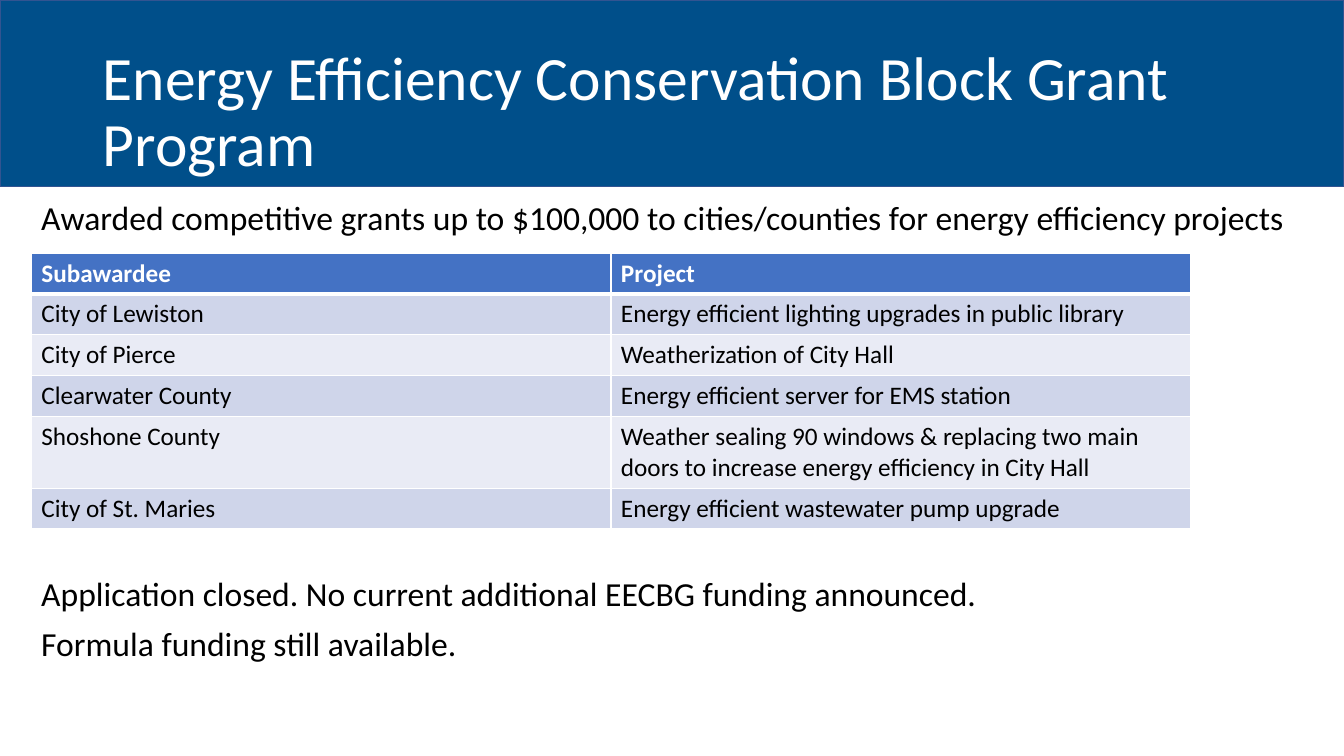
import dataclasses

import lxml.etree
import pptx
import pptx.dml.color
import pptx.enum.shapes
import pptx.enum.text
import pptx.oxml.ns
import pptx.presentation
import pptx.shapes.autoshape
import pptx.slide
import pptx.table
import pptx.text.text
import pptx.util

COLORS = {
    "banner": "004F8A",
    "banner_edge": "325491",
    "header": "4472C4",
    "odd_row": "CFD5EA",
    "even_row": "E9EBF5",
    "white": "FFFFFF",
    "black": "000000",
}
FONT = "Calibri"
SLIDE_WIDTH = pptx.util.Inches(13.33)
SLIDE_HEIGHT = pptx.util.Inches(7.5)
LEFT_MARGIN = 2.33
CONTENT_WIDTH = 86.25
LINE_ROW = 5.41
WRAPPED_ROW = 9.41


@dataclasses.dataclass(frozen=True)
class Area:
    left: float
    top: float
    width: float
    height: float

    def lengths(self) -> tuple[int, int, int, int]:
        return (
            across(self.left), down(self.top),
            across(self.width), down(self.height),
        )


@dataclasses.dataclass(frozen=True)
class Note:
    area: Area
    lines: tuple[str, ...]


@dataclasses.dataclass(frozen=True)
class Award:
    subawardee: str
    project: str
    height: float = LINE_ROW


TITLE = "Energy Efficiency Conservation Block Grant Program"
AWARDS = (
    Award("Subawardee", "Project"),
    Award("City of Lewiston", "Energy efficient lighting upgrades in public library"),
    Award("City of Pierce", "Weatherization of City Hall"),
    Award("Clearwater County", "Energy efficient server for EMS station"),
    Award(
        "Shoshone County",
        "Weather sealing 90 windows & replacing two main doors "
        "to increase energy efficiency in City Hall",
        WRAPPED_ROW,
    ),
    Award("City of St. Maries", "Energy efficient wastewater pump upgrade"),
)
NOTES = (
    Note(
        Area(LEFT_MARGIN, 75.73, 74.94, 12.93),
        (
            "Application closed. No current additional EECBG funding announced.",
            "Formula funding still available.",
        ),
    ),
    Note(
        Area(LEFT_MARGIN, 26, 97.67, 6.13),
        (
            "Awarded competitive grants up to $100,000 to cities/counties "
            "for energy efficiency projects",
        ),
    ),
)


def across(percent: float) -> int:
    return round(SLIDE_WIDTH * percent / 100)


def down(percent: float) -> int:
    return round(SLIDE_HEIGHT * percent / 100)


def color(name: str) -> pptx.dml.color.RGBColor:
    return pptx.dml.color.RGBColor.from_string(COLORS[name])


def format_text(
    frame: pptx.text.text.TextFrame, size: float, color_name: str, bold: bool = False
) -> None:
    for paragraph in frame.paragraphs:
        for run in paragraph.runs:
            run.font.name = FONT
            run.font.size = pptx.util.Pt(size)
            run.font.bold = bold
            run.font.color.rgb = color(color_name)


def draw_title(slide: pptx.slide.Slide) -> None:
    title = slide.shapes.title
    title.left, title.top, title.width, title.height = Area(
        6.9, 5.33, CONTENT_WIDTH, 19.33
    ).lengths()
    frame = title.text_frame
    frame.text = TITLE
    frame.word_wrap = True
    frame.auto_size = pptx.enum.text.MSO_AUTO_SIZE.NONE
    frame.vertical_anchor = pptx.enum.text.MSO_ANCHOR.MIDDLE
    frame.paragraphs[0].alignment = pptx.enum.text.PP_ALIGN.LEFT
    frame.paragraphs[0].line_spacing = 0.9
    format_text(frame, 44, "white")

    banner = slide.shapes.add_shape(
        pptx.enum.shapes.MSO_SHAPE.RECTANGLE, *Area(0, 0, 100, 24.67).lengths()
    )
    banner.shadow.inherit = False
    banner.fill.solid()
    banner.fill.fore_color.rgb = color("banner")
    banner.line.color.rgb = color("banner_edge")
    banner.line.width = pptx.util.Pt(1)
    title.element.addprevious(banner.element)


def draw_borders(cell: pptx.table._Cell, bottom: float, top: float) -> None:
    properties = cell._tc.get_or_add_tcPr()
    for side, width in (("lnL", 1), ("lnR", 1), ("lnT", top), ("lnB", bottom)):
        border = lxml.etree.SubElement(
            properties, pptx.oxml.ns.qn(f"a:{side}"), w=str(pptx.util.Pt(width))
        )
        fill = lxml.etree.SubElement(border, pptx.oxml.ns.qn("a:solidFill"))
        lxml.etree.SubElement(
            fill, pptx.oxml.ns.qn("a:srgbClr"), val=COLORS["white"]
        )


def draw_awards(slide: pptx.slide.Slide) -> None:
    area = Area(
        LEFT_MARGIN, 33.47, CONTENT_WIDTH, sum(award.height for award in AWARDS)
    )
    table = slide.shapes.add_table(len(AWARDS), 2, *area.lengths()).table
    for column in table.columns:
        column.width = across(CONTENT_WIDTH / 2)
    for index, award in enumerate(AWARDS):
        table.rows[index].height = down(award.height)
        heading = index == 0
        band = "header" if heading else ("even_row", "odd_row")[index % 2]
        for position, wording in enumerate((award.subawardee, award.project)):
            cell = table.cell(index, position)
            cell.text_frame.text = wording
            format_text(
                cell.text_frame, 18, "white" if heading else "black", heading
            )
            draw_borders(cell, 3 if heading else 1, 3 if index == 1 else 1)
            cell.fill.solid()
            cell.fill.fore_color.rgb = color(band)


def draw_note(slide: pptx.slide.Slide, note: Note) -> None:
    frame = slide.shapes.add_textbox(*note.area.lengths()).text_frame
    frame.word_wrap = True
    frame.auto_size = pptx.enum.text.MSO_AUTO_SIZE.SHAPE_TO_FIT_TEXT
    frame.text = "\n".join(note.lines)
    for index, paragraph in enumerate(frame.paragraphs):
        paragraph.line_spacing = 0.9
        paragraph.space_before = pptx.util.Pt(10 if index else 0)
    format_text(frame, 24, "black")


def main() -> None:
    presentation = pptx.Presentation()
    presentation.slide_width = SLIDE_WIDTH
    presentation.slide_height = SLIDE_HEIGHT
    slide = presentation.slides.add_slide(
        presentation.slide_layouts.get_by_name("Title Only")
    )
    draw_title(slide)
    draw_awards(slide)
    for note in NOTES:
        draw_note(slide, note)
    presentation.save("out.pptx")


if __name__ == "__main__":
    main()
